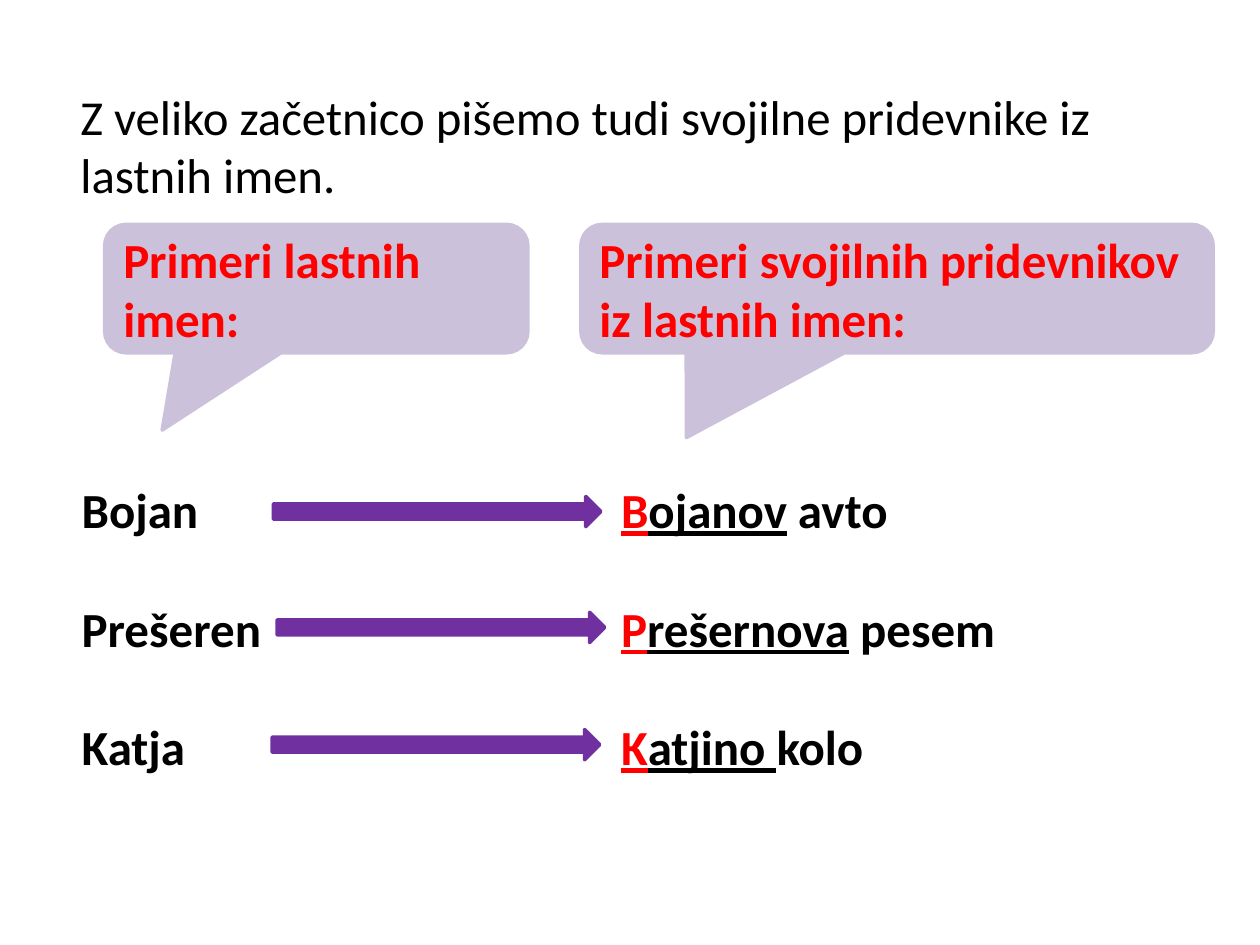
from dataclasses import dataclass
from pptx import Presentation
from pptx.dml.color import RGBColor as Rgb
from pptx.enum.shapes import MSO_SHAPE as Kind
from pptx.enum.text import MSO_ANCHOR as Anchor, PP_ALIGN as Align
from pptx.util import Pt

HUES = {"ink": "000000", "red": "FF0000", "arrow": "7030A0", "bubble": "CCC1DA"}
LINE = 34.2  # height of one text line


@dataclass
class Box:
    left: float
    top: float
    width: float
    height: float

    def pts(self) -> list:
        return [Pt(v) for v in (self.left, self.top, self.width, self.height)]


@dataclass
class Part:
    text: str
    hue: str = "ink"
    bold: bool = True
    under: bool = False
    size: float = 28


@dataclass
class Row:
    name: str
    first: str
    rest: str
    noun: str
    left: float
    top: float


@dataclass
class Bubble:
    text: str
    box: Box
    tip: tuple


ROWS = [
    Row("Bojan", "B", "ojanov", " avto", 156.2, 283.7),
    Row("Prešeren", "P", "rešernova", " pesem", 158.4, 349.9),
    Row("Katja", "K", "atjino ", "kolo", 155.5, 416.9),
]
BUBBLES = [
    Bubble("Primeri lastnih imen:", Box(59.8, 128.2, 241.9, 73.4), (-0.364, 1.102, 0.167)),
    Bubble("Primeri svojilnih pridevnikov iz lastnih imen:",
           Box(331.9, 128.2, 361.4, 73.4), (-0.333, 1.16, 0.167)),
]


def write(frame, lines: list, gap: float = 0, **form) -> None:
    """Fill a frame with lines of parts, with a gap between the lines."""
    for key, val in {"word_wrap": True, **form}.items():
        setattr(frame, key, val)
    for i, parts in enumerate(lines):
        para = frame.add_paragraph() if i else frame.paragraphs[0]
        para.alignment = Align.LEFT
        para.space_before = Pt(gap if i else 0)
        for part in parts:
            run = para.add_run()
            run.text = part.text
            look = {"name": "Calibri", "size": Pt(part.size),
                    "bold": part.bold, "underline": part.under}
            for key, val in look.items():
                setattr(run.font, key, val)
            run.font.color.rgb = Rgb.from_string(HUES[part.hue])


def draw(slide, kind: Kind, box: Box, hue: str):
    shape = slide.shapes.add_shape(kind, *box.pts())
    shape.shadow.inherit = False
    shape.fill.solid()
    for fill in (shape.fill, shape.line.fill):
        fill.solid()
        fill.fore_color.rgb = Rgb.from_string(HUES[hue])
    shape.line.width = Pt(2)
    return shape


def label(slide, box: Box, lines: list, **form) -> None:
    write(slide.shapes.add_textbox(*box.pts()).text_frame, lines, **form)


def main() -> None:
    deck = Presentation()
    deck.slide_width, deck.slide_height = Pt(720), Pt(540)
    slide = deck.slides.add_slide(deck.slide_layouts[6])

    title = "Z veliko začetnico pišemo tudi svojilne pridevnike iz lastnih imen."
    label(slide, Box(38.9, 60.5, 648, 79.2), [[Part(title, bold=False, size=27.9)]],
          vertical_anchor=Anchor.MIDDLE, margin_bottom=Pt(3.6 + LINE))

    form = {"gap": LINE, "margin_top": Pt(3.6 + LINE)}
    names = [[Part(row.name)] for row in ROWS]
    label(slide, Box(39.6, 236.2, 118.1, 244.8), names, word_wrap=False, **form)
    pairs = [[Part(row.first, "red", under=True), Part(row.rest, under=True),
              Part(row.noun)] for row in ROWS]
    label(slide, Box(347.8, 236.2, 329, 244.8), pairs, **form)

    for row in ROWS:
        draw(slide, Kind.RIGHT_ARROW, Box(row.left, row.top, 187.2, 17.3), "arrow")
    for item in BUBBLES:
        shape = draw(slide, Kind.ROUNDED_RECTANGULAR_CALLOUT, item.box, "bubble")
        for i, val in enumerate(item.tip):
            shape.adjustments[i] = val
        write(shape.text_frame, [[Part(item.text, "red")]], vertical_anchor=Anchor.MIDDLE)

    deck.save("out.pptx")


if __name__ == "__main__":
    main()
